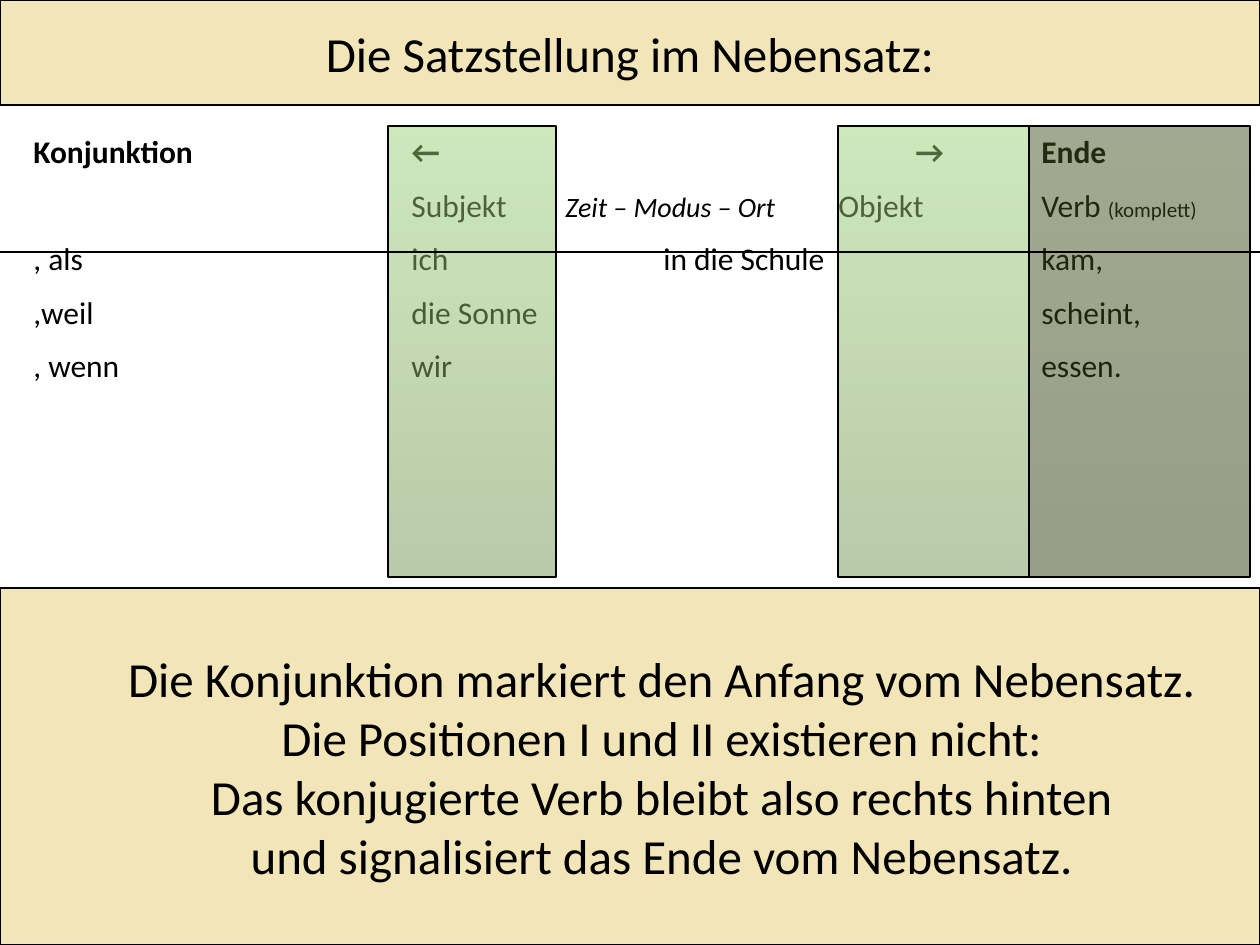
"""Build a slide on German word order in subordinate clauses."""
from lxml import etree
from pptx import Presentation, util as u
from pptx.dml.color import RGBColor
from pptx.enum import shapes, text
from pptx.oxml.ns import qn

COLORS = {"ink": "000000", "banner": "F2E6B8",
          "green_top": "9FD179", "green_bottom": "729657",
          "olive_top": "46551F", "olive_bottom": "323D16"}
FONT = "Calibri"
PX_PER_INCH = 126
WIDTH, HEIGHT = 1260, 945
COLUMN_TOP, COLUMN_HEIGHT = 126, 451
SUBJECT_TAB, PLACE_TAB, ARROW_TAB, VERB_TAB = 378, 630, 882, 1008


def px(length):
    return u.Emu(round(length * 914400 / PX_PER_INCH))


def color(name):
    return RGBColor.from_string(COLORS[name])


def add_run(paragraph, content, size, bold=False, italic=False):
    run = paragraph.add_run()
    run.text = content
    font = run.font
    font.name, font.size, font.bold, font.italic = FONT, u.Pt(size), bold, italic
    font.color.rgb = color("ink")


def set_tabs(paragraph, stops):
    tab_list = etree.SubElement(paragraph._p.get_or_add_pPr(), qn("a:tabLst"))
    for stop in stops:
        etree.SubElement(tab_list, qn("a:tab"), pos=str(px(stop)), algn="l")


def add_sentence_rows(slide, rows):
    box = slide.shapes.add_textbox(px(21), px(126), px(WIDTH), px(316))
    frame = box.text_frame
    frame.word_wrap = True
    for index, (stops, runs) in enumerate(rows):
        paragraph = frame.add_paragraph() if index else frame.paragraphs[0]
        set_tabs(paragraph, stops)
        if index:
            paragraph.space_before = u.Pt(9)
        for run in runs:
            add_run(paragraph, *run)


def add_rectangle(slide, left, top, width, height):
    shape = slide.shapes.add_shape(
        shapes.MSO_SHAPE.RECTANGLE, px(left), px(top), px(width), px(height))
    shape.shadow.inherit = False
    shape.line.color.rgb = color("ink")
    shape.line.width = u.Pt(0.75)
    return shape


def add_column(slide, left, width, tone):
    shape = add_rectangle(slide, left, COLUMN_TOP, width, COLUMN_HEIGHT)
    shape.fill.gradient()
    shape.fill.gradient_angle = 270
    for stop, end in zip(shape.fill.gradient_stops, ("top", "bottom")):
        stop.color.rgb = color(f"{tone}_{end}")
    gradient = shape._element.spPr.find(qn("a:gradFill"))
    for tint in gradient.iter(qn("a:srgbClr")):
        etree.SubElement(tint, qn("a:alpha"), val="50000")


def add_divider(slide, top):
    line = slide.shapes.add_connector(
        shapes.MSO_CONNECTOR.STRAIGHT, 0, px(top), px(WIDTH), px(top))
    line.line.color.rgb = color("ink")
    line.line.width = u.Pt(0.75)
    etree.SubElement(line._element.spPr, qn("a:effectLst"))


def add_banner(slide, top, height, paragraphs, indent=0):
    shape = add_rectangle(slide, 0, top, WIDTH, height)
    shape.fill.solid()
    shape.fill.fore_color.rgb = color("banner")
    frame = shape.text_frame
    frame.word_wrap = True
    frame.margin_left = u.Inches(0.1) + px(indent)
    frame.vertical_anchor = text.MSO_ANCHOR.MIDDLE
    for index, lines in enumerate(paragraphs):
        paragraph = frame.add_paragraph() if index else frame.paragraphs[0]
        paragraph.alignment = text.PP_ALIGN.CENTER
        for number, line in enumerate(lines):
            if number:
                paragraph.add_line_break()
            add_run(paragraph, line, 28)


def main():
    presentation = Presentation()
    presentation.slide_width, presentation.slide_height = px(WIDTH), px(HEIGHT)
    slide = presentation.slides.add_slide(presentation.slide_layouts[6])
    add_sentence_rows(slide, [
        ((SUBJECT_TAB, ARROW_TAB, VERB_TAB),
         [("Konjunktion\t←\t→\tEnde", 18, True)]),
        ((SUBJECT_TAB, 532, 805, VERB_TAB),
         [("\tSubjekt\t", 18), ("Zeit – Modus – Ort", 16, False, True),
          ("\tObjekt\tVerb ", 18), ("(komplett)", 12)]),
        ((SUBJECT_TAB, PLACE_TAB, VERB_TAB),
         [(", als\tich\tin die Schule\tkam,", 18)]),
        ((SUBJECT_TAB, VERB_TAB), [(",weil\tdie Sonne\tscheint,", 18)]),
        ((SUBJECT_TAB, VERB_TAB), [(", wenn\twir\tessen.", 18)]),
    ])
    for left, width, tone in ((838, 191, "green"), (388, 168, "green"),
                              (1029, 221, "olive")):
        add_column(slide, left, width, tone)
    add_divider(slide, 252)
    add_banner(slide, 0, 105, [["Die Satzstellung im Nebensatz:"]])
    add_banner(slide, 588, 357, [
        ["Die Konjunktion markiert den Anfang vom Nebensatz."],
        ["Die Positionen I und II existieren nicht:",
         "Das konjugierte Verb bleibt also rechts hinten",
         "und signalisiert das Ende vom Nebensatz."],
    ], indent=63)
    presentation.save("out.pptx")


if __name__ == "__main__":
    main()
